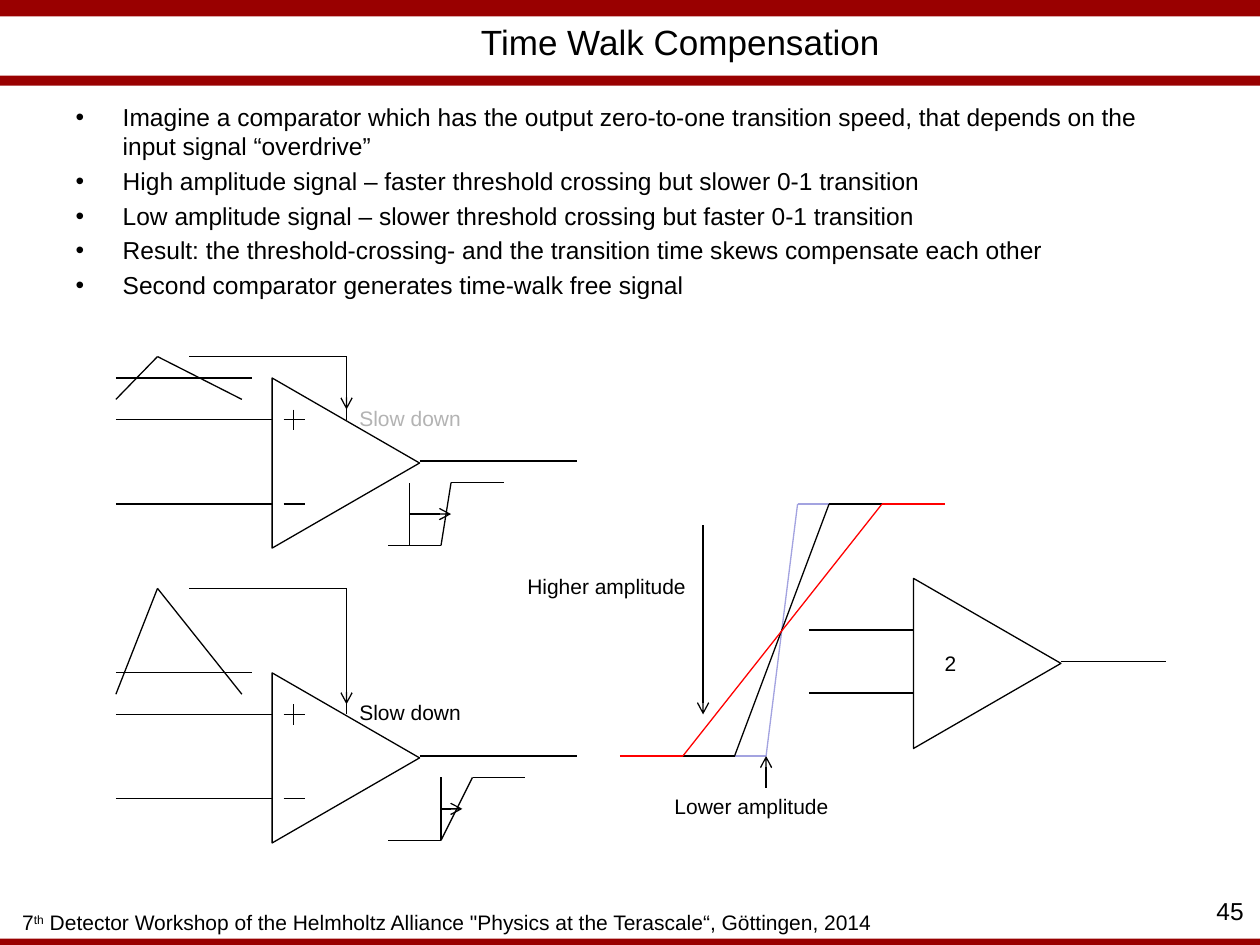
"""Build the slide on time walk compensation with two comparator stages."""
from itertools import pairwise

from lxml.etree import SubElement
from pptx import Presentation
from pptx.dml.color import RGBColor
from pptx.enum.shapes import MSO_CONNECTOR as Connector, MSO_SHAPE as Shape
from pptx.enum.text import MSO_ANCHOR as Anchor, MSO_AUTO_SIZE as AutoSize, PP_ALIGN as Align
from pptx.oxml.ns import qn
from pptx.util import Cm, Pt

INCH = 2.54
BLACK, GREY, RED, BLUE, DARK_RED = "000000", "B3B3B3", "FF0000", "A3A3E0", "990000"
color = RGBColor.from_string

presentation = Presentation()
presentation.slide_width, presentation.slide_height = Cm(10 * INCH), Cm(7.5 * INCH)
slide = presentation.slides.add_slide(presentation.slide_layouts[1])
shapes = slide.shapes


def write_text(paragraph, text, size=12, fill=BLACK, align=Align.CENTER, superscript=None):
    paragraph.alignment = align
    for piece in text.partition(superscript) if superscript else [text]:
        run = paragraph.add_run()
        run.text = piece
        run.font.name, run.font.size = "Arial", Pt(size)
        run.font.color.rgb = color(fill)
        if piece == superscript:
            run.font._element.set("baseline", "30000")


def draw_path(*points, stroke=BLACK, arrow=False):
    for start, end in pairwise(points):
        line = shapes.add_connector(
            Connector.STRAIGHT, *(Cm(value * INCH) for value in start + end))
        line.line.color.rgb = color(stroke)
        line.line.width = Pt(0.75)
        SubElement(line._element.spPr, qn("a:effectLst"))
    if arrow:
        SubElement(line.line._get_or_add_ln(), qn("a:tailEnd"), type="arrow")


for top, height in [(7.45, 0.08), (0, 0.13), (0.6, 0.08)]:
    bar = shapes.add_shape(Shape.RECTANGLE, 0, Cm(top * INCH), Cm(10 * INCH), Cm(height * INCH))
    bar.shadow.inherit = False
    bar.fill.solid()
    bar.fill.fore_color.rgb = color(DARK_RED)
    bar.line.fill.background()

title, body = shapes.title, slide.placeholders[1]
for placeholder, box in [(title, (1.3, 0.14, 8.2, 0.38)), (body, (0.5, 0.76, 9, 1.74))]:
    placeholder.left, placeholder.top, placeholder.width, placeholder.height = (
        Cm(value * INCH) for value in box)
    placeholder.text_frame.auto_size = AutoSize.NONE
title.text_frame.vertical_anchor = Anchor.MIDDLE
write_text(title.text_frame.paragraphs[0], "Time Walk Compensation", size=20)

bullets = [
    "Imagine a comparator which has the output zero-to-one transition speed, "
    "that depends on the input signal “overdrive”",
    "High amplitude signal – faster threshold crossing but slower 0-1 transition",
    "Low amplitude signal – slower threshold crossing but faster 0-1 transition",
    "Result: the threshold-crossing- and the transition time skews compensate each other",
    "Second comparator generates time-walk free signal",
]
for index, bullet in enumerate(bullets):
    frame = body.text_frame
    paragraph = frame.add_paragraph() if index else frame.paragraphs[0]
    paragraph.space_before = Pt(3 if index else 0)
    properties = paragraph._element.get_or_add_pPr()
    properties.set("marL", str(Cm(0.95)))
    properties.set("indent", str(-Cm(0.95)))
    write_text(paragraph, bullet, size=14, align=Align.LEFT)

labels = [
    ("7th Detector Workshop of the Helmholtz Alliance \"Physics at the Terascale“, "
     "Göttingen, 2014", (0.02, 7.17, 7.06, 0.3), {"superscript": "th"}),
    ("45", (9.1, 7.06, 0.87, 0.24), {"size": 14, "align": Align.RIGHT}),
    ("Slow down", (2.75, 3.17, 1.01, 0.3), {"fill": GREY}),
    ("Slow down", (2.75, 5.5, 1.01, 0.3), {}),
    ("Higher amplitude", (4.08, 4.5, 1.47, 0.3), {}),
    ("Lower amplitude", (5.25, 6.25, 1.43, 0.3), {}),
]
for text, box, text_format in labels:
    label = shapes.add_textbox(*(Cm(value * INCH) for value in box))
    label.text_frame.word_wrap = False
    write_text(label.text_frame.paragraphs[0], text, **text_format)

for left, top, text in [(2.07, 3.09, ""), (2.07, 5.43, ""), (7.16, 4.68, "2")]:
    amplifier = shapes.add_shape(
        Shape.ISOSCELES_TRIANGLE, Cm(left * INCH), Cm(top * INCH), Cm(1.35 * INCH), Cm(1.17 * INCH))
    amplifier.rotation = 90
    amplifier.shadow.inherit = False
    amplifier.fill.background()
    amplifier.line.color.rgb = color(BLACK)
    amplifier.line.width = Pt(0.75)
    if text:
        amplifier.text_frame.vertical_anchor = Anchor.MIDDLE
        amplifier.text_frame._txBody.bodyPr.set("vert", "vert270")
        write_text(amplifier.text_frame.paragraphs[0], text)

stages = [
    (3.33, 2.83, 3.58, 3.25, 3.58),
    (5.67, 4.67, 3.75, 3.5, 3.67),
]
for plus, peak, rise_end, delay_start, delay_end in stages:
    minus, threshold, output = plus + 0.67, plus - 0.33, plus + 0.33
    high, low = plus + 0.5, plus + 1
    for level in (plus, minus):
        draw_path((0.92, level), (2.17, level))
        draw_path((2.25, level), (2.42, level))
    draw_path((2.33, plus - 0.08), (2.33, plus + 0.08))
    draw_path((3.33, output), (4.58, output))
    draw_path((0.92, threshold), (2, threshold))
    draw_path((0.92, plus - 0.16), (1.25, peak), (1.92, plus - 0.16))
    draw_path((1.5, peak), (2.75, peak), (2.75, plus - 0.08), arrow=True)
    draw_path((2.75, threshold), (2.75, plus))
    draw_path((3.08, low), (3.5, low), (rise_end, high), (rise_end + 0.42, high))
    draw_path((delay_start, low), (delay_start, high))
    draw_path((delay_start, high + 0.25), (delay_end, high + 0.25), arrow=True)

transitions = [
    (BLUE, 5.67, 6.08, 6.33, 6.75),
    (BLACK, 5.33, 5.83, 6.58, 7.08),
    (RED, 4.92, 5.42, 7, 7.5),
]
for stroke, start, rise_start, rise_end, end in transitions:
    draw_path((start, 6), (rise_start, 6), (rise_end, 4), (end, 4), stroke=stroke)

draw_path((5.58, 4.17), (5.58, 5.67), arrow=True)
draw_path((6.08, 6.25), (6.08, 6), arrow=True)
for start, end, level in [(6.42, 7.25, 5), (6.42, 7.25, 5.5), (8.42, 9.25, 5.25)]:
    draw_path((start, level), (end, level))

presentation.save("out.pptx")
